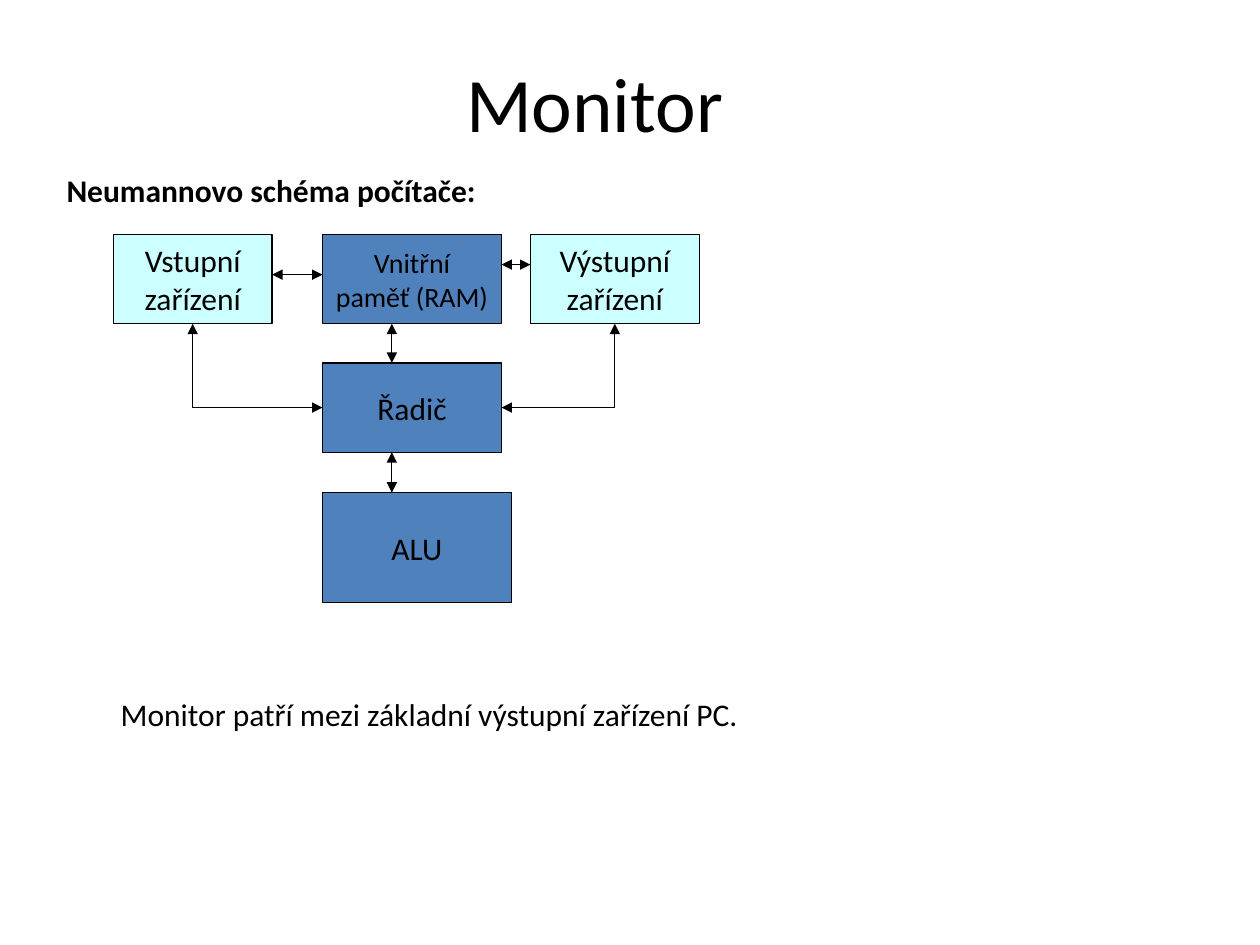
from dataclasses import dataclass

from lxml.etree import SubElement
from pptx import Presentation
from pptx.dml.color import RGBColor
from pptx.enum.shapes import MSO_CONNECTOR as Link, MSO_SHAPE as Shape
from pptx.enum.text import MSO_ANCHOR as Anchor, PP_ALIGN as Align
from pptx.oxml.ns import qn
from pptx.util import Inches, Pt


@dataclass(frozen=True)
class Theme:
    font: str = "Calibri"
    ink: RGBColor = RGBColor(0x00, 0x00, 0x00)
    core: RGBColor = RGBColor(0x4F, 0x81, 0xBD)
    device: RGBColor = RGBColor(0xCC, 0xFF, 0xFF)
    title_size: int = 44
    text_size: int = 18
    small_size: int = 16
    line_width: float = 0.75


class SlideBuilder:
    def __init__(self, slide, theme):
        self.slide = slide
        self.theme = theme

    def set_text(self, shape, text, size, align, anchor, bold=False, wrap=True):
        frame = shape.text_frame
        frame.text = text
        frame.word_wrap = wrap
        frame.vertical_anchor = anchor
        for para in frame.paragraphs:
            para.alignment = align
            for span in para.runs:
                span.font.name = self.theme.font
                span.font.size = Pt(size)
                span.font.bold = bold
                span.font.color.rgb = self.theme.ink

    def outline(self, line):
        line.color.rgb = self.theme.ink
        line.width = Pt(self.theme.line_width)

    def title(self, text, left, top, width, height):
        title = self.slide.shapes.title
        title.left, title.top = Inches(left), Inches(top)
        title.width, title.height = Inches(width), Inches(height)
        self.set_text(title, text, self.theme.title_size, Align.CENTER, Anchor.MIDDLE)

    def label(self, text, left, top, width, height, bold=False):
        box = self.slide.shapes.add_textbox(
            Inches(left), Inches(top), Inches(width), Inches(height))
        self.set_text(box, text, self.theme.text_size, Align.LEFT, Anchor.TOP, bold)

    def unit(self, text, left, top, width, height, fill, size=None):
        box = self.slide.shapes.add_shape(
            Shape.RECTANGLE, Inches(left), Inches(top), Inches(width), Inches(height))
        box.shadow.inherit = False
        box.fill.solid()
        box.fill.fore_color.rgb = fill
        self.outline(box.line)
        self.set_text(box, text, size or self.theme.text_size,
                      Align.CENTER, Anchor.MIDDLE, wrap=False)

    def arrow(self, start, end, kind=Link.STRAIGHT):
        """Draw a line with an arrowhead at both ends."""
        arrow = self.slide.shapes.add_connector(
            kind, *(Inches(value) for value in (*start, *end)))
        self.outline(arrow.line)
        properties = arrow._element.spPr
        line = properties.find(qn("a:ln"))
        for tag in ("a:headEnd", "a:tailEnd"):
            SubElement(line, qn(tag), type="triangle")
        SubElement(properties, qn("a:effectLst"))
        return arrow

    def corner_arrow(self, start, end):
        """Run sideways from start, then turn once towards end."""
        arrow = self.arrow(start, end, Link.ELBOW)
        arrow._element.spPr.find(qn("a:prstGeom")).set("prst", "bentConnector2")


def main():
    deck = Presentation()
    deck.slide_width, deck.slide_height = Inches(10), Inches(7.5)
    slide = deck.slides.add_slide(deck.slide_layouts[0])
    subtitle = slide.placeholders[1]._element
    subtitle.getparent().remove(subtitle)

    theme = Theme()
    builder = SlideBuilder(slide, theme)
    builder.title("Monitor", 1.69, 0, 6.06, 1.61)

    top, height = 1.86, 0.71
    bottom = top + height
    core_left, core_width = 2.56, 1.42
    core_right = core_left + core_width
    control_top, alu_top = 2.88, 3.91
    control_bottom = control_top + height
    control_middle = control_top + height / 2
    input_left, input_width = 0.9, 1.26
    output_left, output_width = 4.21, 1.34

    builder.unit("Vnitřní\npaměť (RAM)", core_left, top, core_width, height,
                 theme.core, theme.small_size)
    builder.unit("Řadič", core_left, control_top, core_width, height, theme.core)
    builder.unit("ALU", core_left, alu_top, 1.5, 0.87, theme.core)
    builder.unit("Vstupní\nzařízení", input_left, top, input_width, height, theme.device)
    builder.unit("Výstupní\nzařízení", output_left, top, output_width, height, theme.device)

    bus = 3.11
    builder.arrow((bus, bottom), (bus, control_top))
    builder.arrow((bus, control_bottom), (bus, alu_top))
    builder.arrow((input_left + input_width, 2.18), (core_left, 2.18))
    builder.arrow((core_right, 2.1), (output_left, 2.1))
    builder.corner_arrow((core_left, control_middle),
                         (input_left + input_width / 2, bottom))
    builder.corner_arrow((core_right, control_middle),
                         (output_left + output_width / 2, bottom))

    builder.label("Neumannovo schéma počítače:", 0.43, 1.31, 3.86, 0.4, bold=True)
    builder.label("Monitor patří mezi základní výstupní zařízení PC.",
                  0.86, 5.47, 8.36, 0.4)
    deck.save("out.pptx")


if __name__ == "__main__":
    main()
